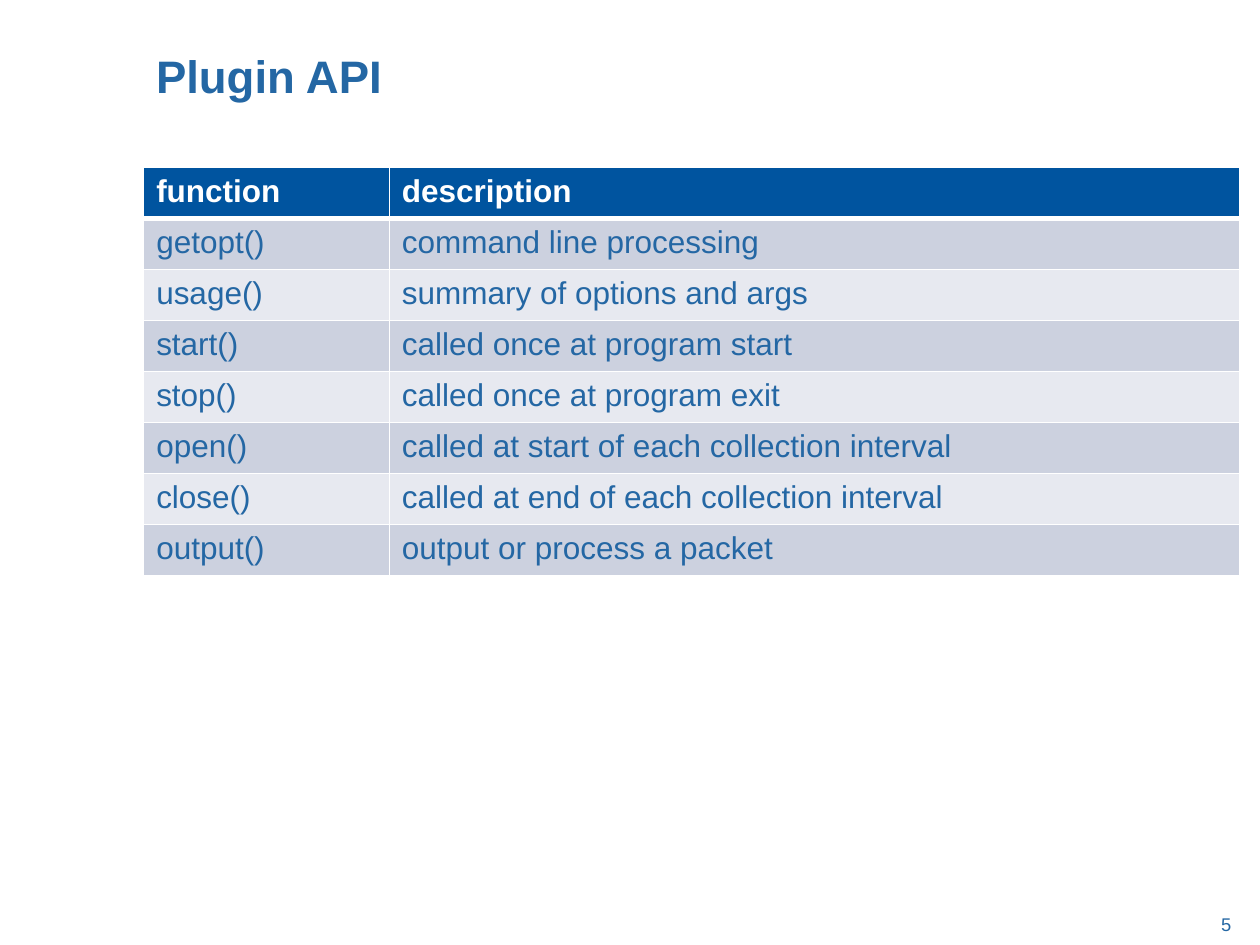
import dataclasses

import lxml.etree
import pptx
import pptx.dml.color
import pptx.enum.text
import pptx.oxml.ns
import pptx.util
from pptx.util import Inches


@dataclasses.dataclass(frozen=True)
class Theme:
    font: str = "Arial"
    text: str = "2467A4"
    white: str = "FFFFFF"
    header: str = "00549F"
    bands: tuple = ("CCD1DF", "E7E9F0")
    title_size: float = 26
    table_size: float = 18
    number_size: float = 10.5
    border: float = 1
    header_border: float = 3


THEME = Theme()

ROWS = [
    ("function", "description"),
    ("getopt()", "command line processing"),
    ("usage()", "summary of options and args"),
    ("start()", "called once at program start"),
    ("stop()", "called once at program exit"),
    ("open()", "called at start of each collection interval"),
    ("close()", "called at end of each collection interval"),
    ("output()", "output or process a packet"),
]


def add_run(paragraph, text, size, color, bold=False):
    run = paragraph.add_run()
    run.text = text
    run.font.name = THEME.font
    run.font.size = pptx.util.Pt(size)
    run.font.bold = bold
    run.font.color.rgb = pptx.dml.color.RGBColor.from_string(color)


def set_border(cell, side, width):
    properties = cell._tc.get_or_add_tcPr()
    line = lxml.etree.SubElement(
        properties, pptx.oxml.ns.qn(f"a:ln{side}"), w=str(pptx.util.Pt(width))
    )
    fill = lxml.etree.SubElement(line, pptx.oxml.ns.qn("a:solidFill"))
    lxml.etree.SubElement(fill, pptx.oxml.ns.qn("a:srgbClr"), val=THEME.white)


def add_title(slide, left, top, width, height):
    frame = slide.shapes.add_textbox(left, top, width, height).text_frame
    frame.word_wrap = True
    add_run(frame.paragraphs[0], "Plugin API", THEME.title_size, THEME.text, bold=True)


def add_function_table(slide, left, top, width, height):
    shape = slide.shapes.add_table(len(ROWS), len(ROWS[0]), left, top, width, height)
    table = shape.table
    name_width = Inches(1.95)
    table.columns[0].width = name_width
    table.columns[1].width = width - name_width

    for row_index, texts in enumerate(ROWS):
        is_header = row_index == 0
        color = THEME.white if is_header else THEME.text
        background = THEME.header if is_header else THEME.bands[(row_index - 1) % 2]
        # The rule under the header is thicker than the rest of the grid
        top_border = THEME.header_border if row_index == 1 else THEME.border
        bottom_border = THEME.header_border if is_header else THEME.border
        borders = {"L": THEME.border, "R": THEME.border, "T": top_border, "B": bottom_border}
        for column_index, text in enumerate(texts):
            cell = table.cell(row_index, column_index)
            for side, border_width in borders.items():
                set_border(cell, side, border_width)
            cell.fill.solid()
            cell.fill.fore_color.rgb = pptx.dml.color.RGBColor.from_string(background)
            paragraph = cell.text_frame.paragraphs[0]
            add_run(paragraph, text, THEME.table_size, color, bold=is_header)


def add_page_number(slide, left, top, width, height):
    frame = slide.shapes.add_textbox(left, top, width, height).text_frame
    frame.word_wrap = False
    frame.vertical_anchor = pptx.enum.text.MSO_ANCHOR.BOTTOM
    paragraph = frame.paragraphs[0]
    paragraph.alignment = pptx.enum.text.PP_ALIGN.RIGHT
    add_run(paragraph, "5 ", THEME.number_size, THEME.text)


def main():
    presentation = pptx.Presentation()
    presentation.slide_width = Inches(10)
    presentation.slide_height = Inches(7.5)
    slide = presentation.slides.add_slide(presentation.slide_layouts[6])

    # Title and table share the same left edge and width
    left, width = Inches(1.14), Inches(8.7)
    add_page_number(slide, Inches(9.56), Inches(7.19), Inches(0.35), Inches(0.28))
    add_function_table(slide, left, Inches(1.33), width, Inches(3.24))
    add_title(slide, left, Inches(0.33), width, Inches(0.83))
    presentation.save("out.pptx")


if __name__ == "__main__":
    main()
